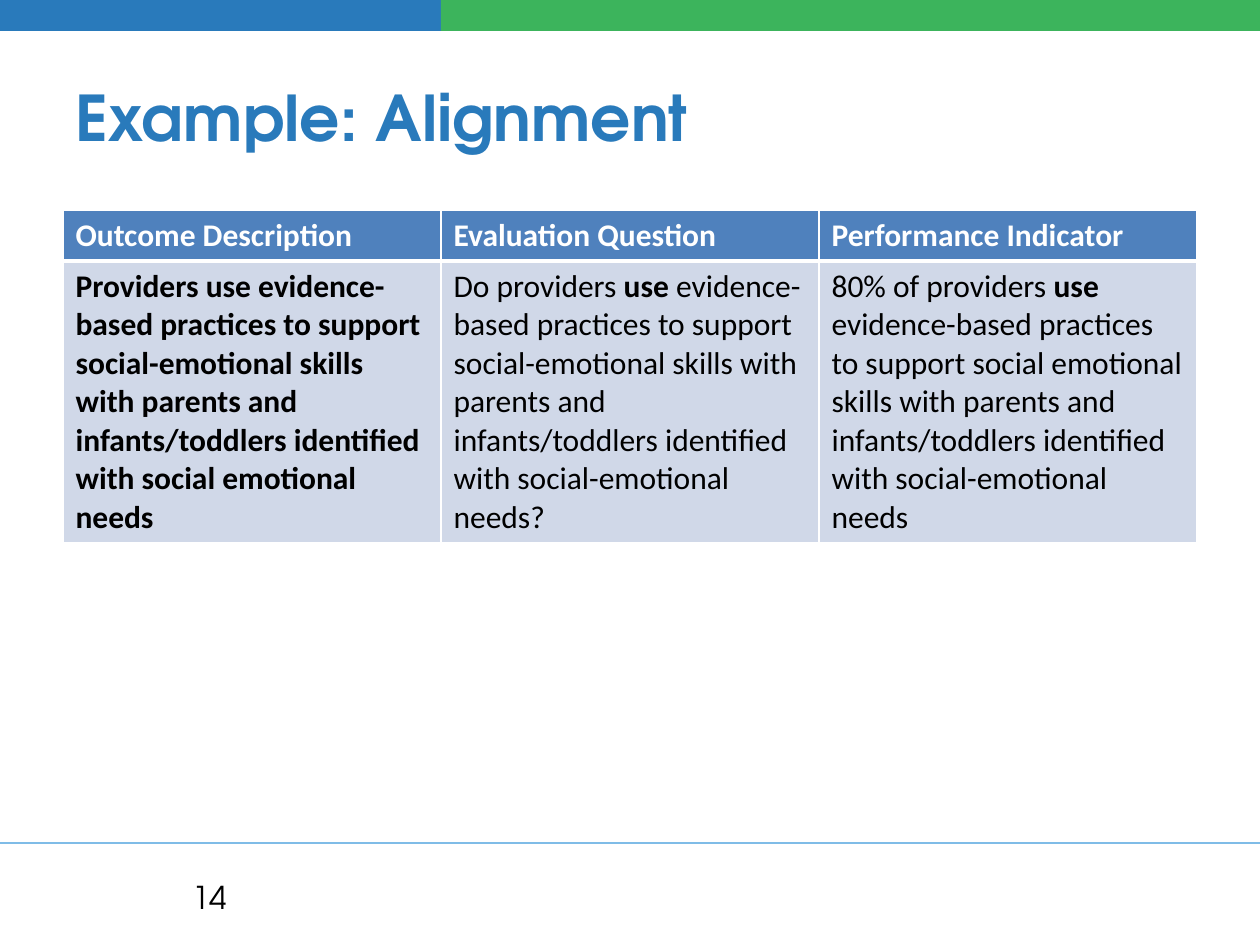
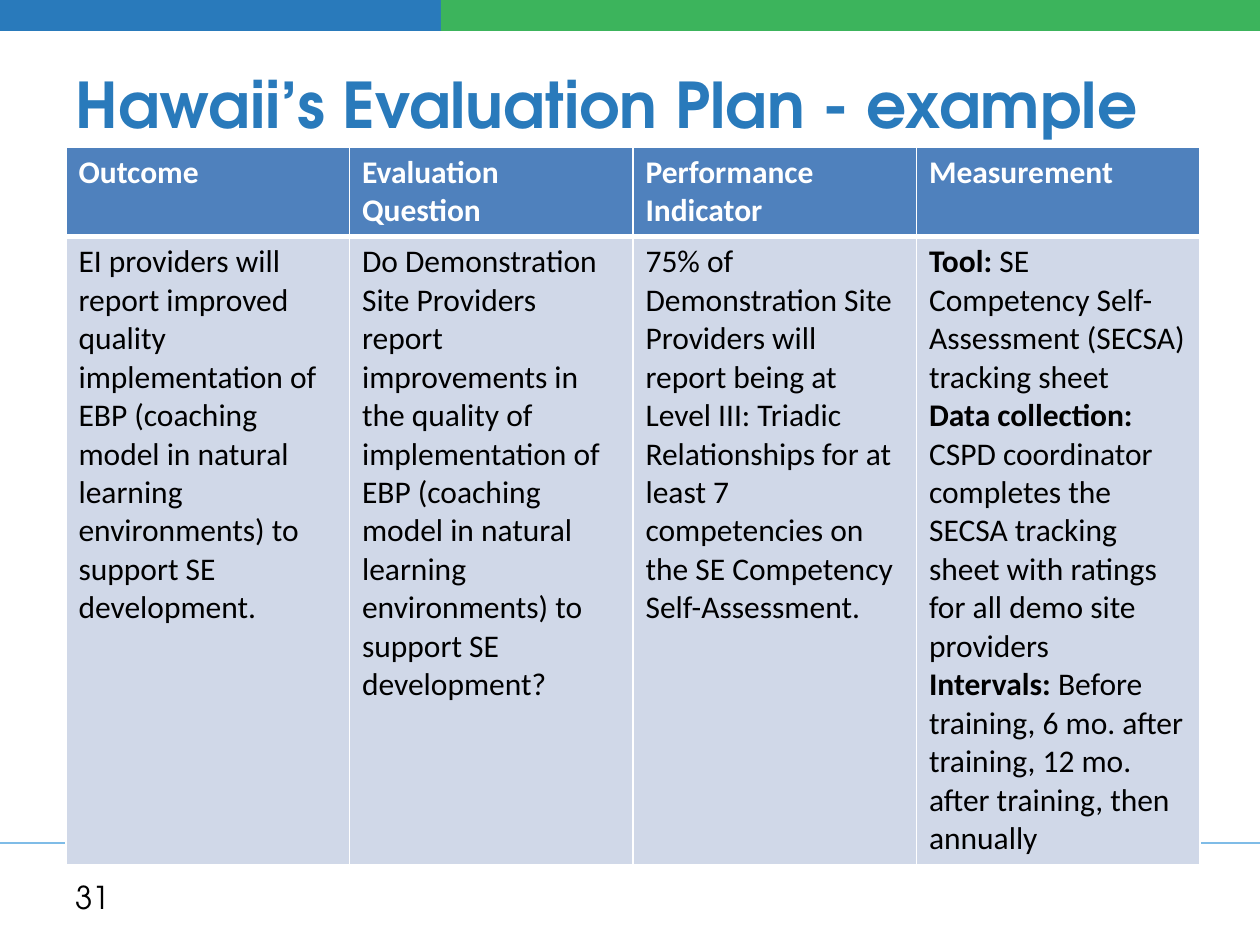
from lxml import etree
from pptx import Presentation
from pptx.dml.color import RGBColor
from pptx.enum.shapes import MSO_CONNECTOR as Connector, MSO_SHAPE as Shape
from pptx.enum.text import MSO_ANCHOR as Anchor, PP_ALIGN as Align
from pptx.oxml.ns import qn
from pptx.util import Emu, Pt

PX = 914400 / 126
PAGE_WIDTH, PAGE_HEIGHT = 1260, 945
MARGIN, CONTENT_WIDTH = 63, 1134
BAND_TOP, BAND_HEIGHT = -158, 189

BLUE = RGBColor(0x29, 0x7A, 0xBB)
GREEN = RGBColor(0x3C, 0xB4, 0x5C)
SKY = RGBColor(0x7F, 0xBC, 0xE7)
HEADER_FILL = RGBColor(0x4F, 0x81, 0xBD)
BODY_FILL = RGBColor(0xD0, 0xD8, 0xE8)
WHITE = RGBColor(0xFF, 0xFF, 0xFF)
BLACK = RGBColor(0, 0, 0)

DISPLAY, BODY = "TeX Gyre Adventor", "Calibri"
TITLE_FONT = {"name": DISPLAY, "size": Pt(36), "bold": True}
NUMBER_FONT = {"name": DISPLAY, "size": Pt(18), "bold": False}
CELL_FONT = {"name": BODY, "size": Pt(18)}

# Double asterisks switch bold on and off inside a cell
ALIGNMENT_ROWS = [
    ["**Outcome Description**", "**Evaluation Question**", "**Performance Indicator**"],
    ["**Providers use evidence-based practices to support social-emotional skills "
     "with parents and infants/toddlers identified with social emotional needs**",
     "Do providers **use** evidence-based practices to support social-emotional skills "
     "with parents and infants/toddlers identified with social-emotional needs?",
     "80% of providers **use **evidence-based practices to support social emotional skills "
     "with parents and infants/toddlers identified with social-emotional needs"],
]
PLAN_ROWS = [
    ["**Outcome**", "**Evaluation Question**", "**Performance Indicator**", "**Measurement**"],
    ["EI providers will report improved quality implementation of EBP (coaching model "
     "in natural learning environments) to support SE development.",
     "Do Demonstration Site Providers report improvements in the quality of implementation "
     "of EBP (coaching model in natural learning environments) to support SE development?",
     "75% of Demonstration Site Providers will report being at Level III: Triadic "
     "Relationships for at least 7 competencies on the SE Competency Self-Assessment.",
     "**Tool: **SE Competency Self-Assessment (SECSA) tracking sheet\n"
     "**Data collection: **CSPD coordinator completes the SECSA tracking sheet "
     "with ratings for all demo site providers\n"
     "**Intervals: **Before training, 6 mo. after training, 12 mo. after training, "
     "then annually"],
]


def px(*lengths):
    return [Emu(round(length * PX)) for length in lengths]


def style_font(font, values, color):
    for name, value in values.items():
        setattr(font, name, value)
    font.color.rgb = color


def add_band(page, left, width, color):
    place = px(left, BAND_TOP, width, BAND_HEIGHT)
    band = page.shapes.add_shape(Shape.RECTANGLE, *place)
    band.shadow.inherit = False
    band.fill.solid()
    band.fill.fore_color.rgb = color
    band.line.fill.background()


def add_footer_rule(page):
    rule = page.shapes.add_connector(Connector.STRAIGHT, *px(0, 843, PAGE_WIDTH, 843))
    rule.line.color.rgb = SKY
    rule.line.width = Pt(1.5)
    etree.SubElement(rule._element.spPr, qn("a:effectLst"))


def add_text(page, place, text, values, color, align=Align.LEFT):
    box = page.shapes.add_textbox(*px(*place))
    frame = box.text_frame
    frame.word_wrap = True
    frame.vertical_anchor = Anchor.MIDDLE
    para = frame.paragraphs[0]
    para.alignment = align
    span = para.add_run()
    span.text = text
    style_font(span.font, values, color)


def add_border(cell, side, points):
    props = cell._tc.get_or_add_tcPr()
    edge = etree.SubElement(props, qn(f"a:ln{side}"), w=str(Pt(points)))
    fill = etree.SubElement(edge, qn("a:solidFill"))
    etree.SubElement(fill, qn("a:srgbClr"), val=str(WHITE))


def fill_cell(cell, text, is_header):
    # Borders go in before the fill; the thick one divides header and body
    thick_side = "B" if is_header else "T"
    for side in "LRTB":
        add_border(cell, side, 3 if side == thick_side else 1)
    cell.fill.solid()
    cell.fill.fore_color.rgb = HEADER_FILL if is_header else BODY_FILL
    frame = cell.text_frame
    for number, line in enumerate(text.split("\n")):
        para = frame.add_paragraph() if number else frame.paragraphs[0]
        for index, part in enumerate(line.split("**")):
            if part:
                span = para.add_run()
                span.text = part
                values = {**CELL_FONT, "bold": index % 2 == 1}
                style_font(span.font, values, WHITE if is_header else BLACK)


def add_grid(page, left, top, heights, rows):
    columns = len(rows[0])
    place = px(left, top, CONTENT_WIDTH, sum(heights))
    table = page.shapes.add_table(len(rows), columns, *place).table
    table.horz_banding = False
    for column in table.columns:
        column.width = px(CONTENT_WIDTH / columns)[0]
    for row_index, (height, texts) in enumerate(zip(heights, rows)):
        table.rows[row_index].height = px(height)[0]
        for column_index, text in enumerate(texts):
            fill_cell(table.cell(row_index, column_index), text, row_index == 0)


def add_page(deck, title, title_height, number, number_align, grid):
    page = deck.slides.add_slide(deck.slide_layouts[6])
    # Shared frame
    add_footer_rule(page)
    add_band(page, 0, PAGE_WIDTH // 2, BLUE)
    add_band(page, 441, PAGE_WIDTH - 441, GREEN)
    # Content
    add_grid(page, *grid)
    add_text(page, (MARGIN, 38, CONTENT_WIDTH, title_height), title, TITLE_FONT, BLUE)
    add_text(page, (MARGIN, 872, 294, 50), number, NUMBER_FONT, BLACK, number_align)


def main():
    deck = Presentation()
    deck.slide_width, deck.slide_height = px(PAGE_WIDTH, PAGE_HEIGHT)
    add_page(deck, "Example: Alignment", 157, "14", Align.CENTER,
             (63, 210, (51, 278), ALIGNMENT_ROWS))
    add_page(deck, "Hawaii’s Evaluation Plan - example", 130, "31", Align.LEFT,
             (66, 147, (87, 628), PLAN_ROWS))
    deck.save("out.pptx")


if __name__ == "__main__":
    main()
